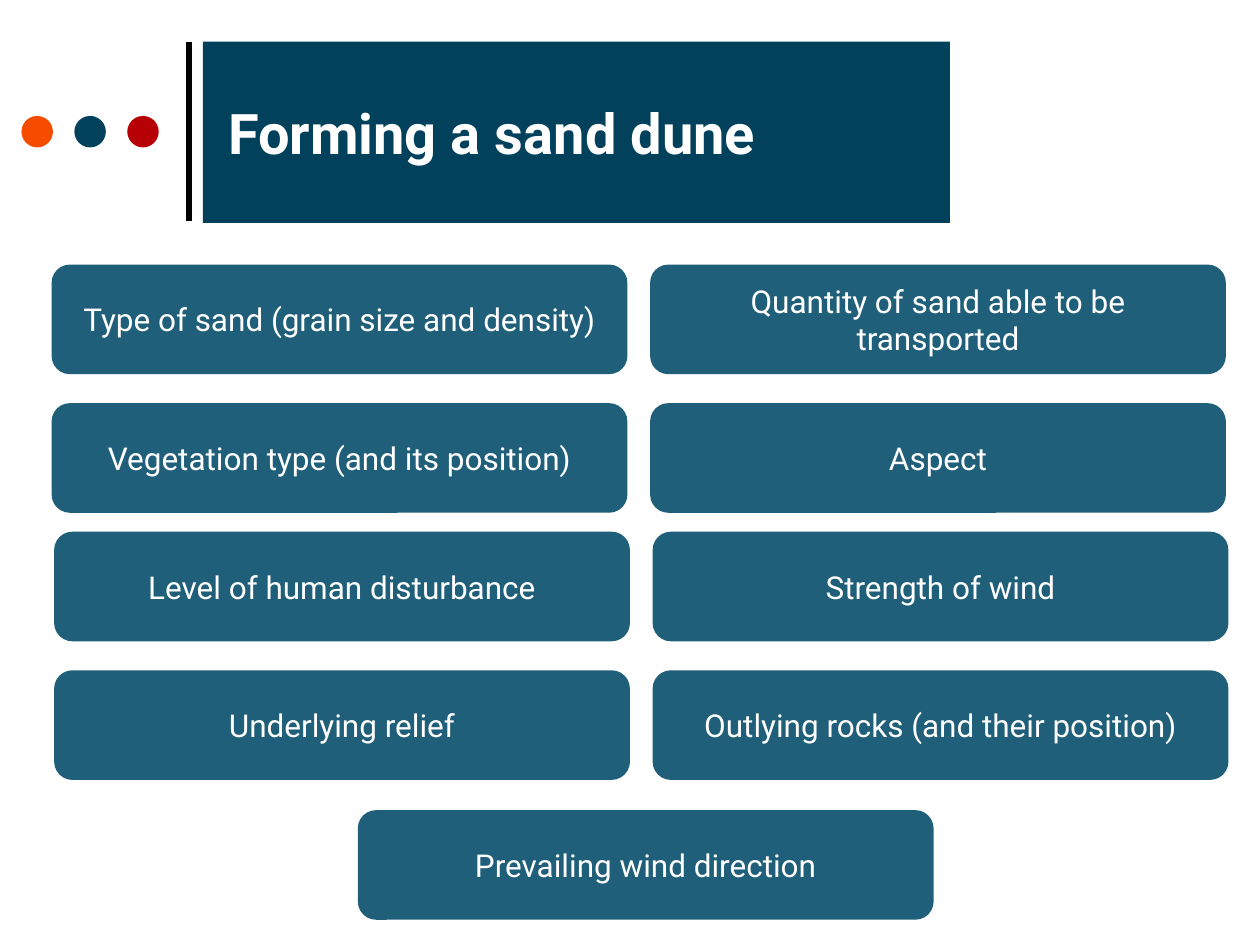
from pptx import Presentation
from pptx.dml.color import RGBColor
from pptx.enum.shapes import MSO_CONNECTOR as CONN, MSO_SHAPE as SHAPE
from pptx.enum.text import MSO_ANCHOR as ANCHOR, MSO_AUTO_SIZE as AUTO, PP_ALIGN as ALIGN
from pptx.oxml.ns import qn
from pptx.util import Inches, Pt
from lxml.etree import SubElement

BLACK = RGBColor(0x00, 0x00, 0x00)
WHITE = RGBColor(0xFF, 0xFF, 0xFF)
ORANGE = RGBColor(0xF5, 0x4C, 0x00)
NAVY = RGBColor(0x01, 0x41, 0x5B)
RED = RGBColor(0xB7, 0x00, 0x05)
TEAL = RGBColor(0x1F, 0x5F, 0x79)

FACTOR_ROWS = [
    (0.41, 2.1, ["Type of sand (grain size and density)", "Quantity of sand able to be transported"]),
    (0.41, 3.2, ["Vegetation type (and its position)", "Aspect"]),
    (0.43, 4.22, ["Level of human disturbance", "Strength of wind"]),
    (0.43, 5.32, ["Underlying relief", "Outlying rocks (and their position)"]),
    (2.84, 6.43, ["Prevailing wind direction"]),
]
COLUMN_STEP = 4.75


class SlideBuilder:
    """Draws the elements of one slide in a shared style."""

    font = "Roboto"

    def __init__(self, prs):
        self.s = prs.slides.add_slide(prs.slide_layouts[5])

    def set_text(self, sp, text, size, align, bold=False):
        tf = sp.text_frame
        tf.word_wrap = True
        tf.auto_size = AUTO.NONE
        tf.vertical_anchor = ANCHOR.MIDDLE
        p = tf.paragraphs[0]
        p.text = text
        p.alignment = align
        p.font.name = self.font
        p.font.size = Pt(size)
        p.font.bold = bold
        p.font.color.rgb = WHITE

    def title(self, text, x, y, w, h):
        sp = self.s.shapes.title
        sp.left, sp.top, sp.width, sp.height = map(Inches, (x, y, w, h))
        sp.fill.solid()
        sp.fill.fore_color.rgb = NAVY
        self.set_text(sp, text, 32, ALIGN.LEFT, bold=True)
        sp.text_frame.margin_left = Inches(0.2)

    def shape(self, kind, x, y, w, h, color):
        sp = self.s.shapes.add_shape(kind, *map(Inches, (x, y, w, h)))
        sp.shadow.inherit = False
        sp.fill.solid()
        sp.fill.fore_color.rgb = color
        sp.line.fill.background()
        return sp

    def dot(self, x, y, color):
        self.shape(SHAPE.OVAL, x, y, 0.25, 0.25, color)

    def factor(self, text, x, y):
        sp = self.shape(SHAPE.ROUNDED_RECTANGLE, x, y, 4.57, 0.87, TEAL)
        self.set_text(sp, text, 18, ALIGN.CENTER)

    def rule(self, x1, y1, x2, y2):
        line = self.s.shapes.add_connector(CONN.STRAIGHT, *map(Inches, (x1, y1, x2, y2)))
        line.line.color.rgb = BLACK
        line.line.width = Pt(3)
        SubElement(line._element.spPr, qn("a:effectLst"))


def main():
    prs = Presentation()
    prs.slide_width, prs.slide_height = Inches(10), Inches(7.5)
    slide = SlideBuilder(prs)
    slide.rule(1.5, 1.75, 1.5, 0.33)
    for i, color in enumerate((ORANGE, NAVY, RED)):
        slide.dot(0.17 + 0.42 * i, 0.92, color)
    slide.title("Forming a sand dune", 1.61, 0.33, 5.93, 1.44)
    for left, top, factors in FACTOR_ROWS:
        for col, text in enumerate(factors):
            slide.factor(text, left + col * COLUMN_STEP, top)
    prs.save("out.pptx")


if __name__ == "__main__":
    main()
